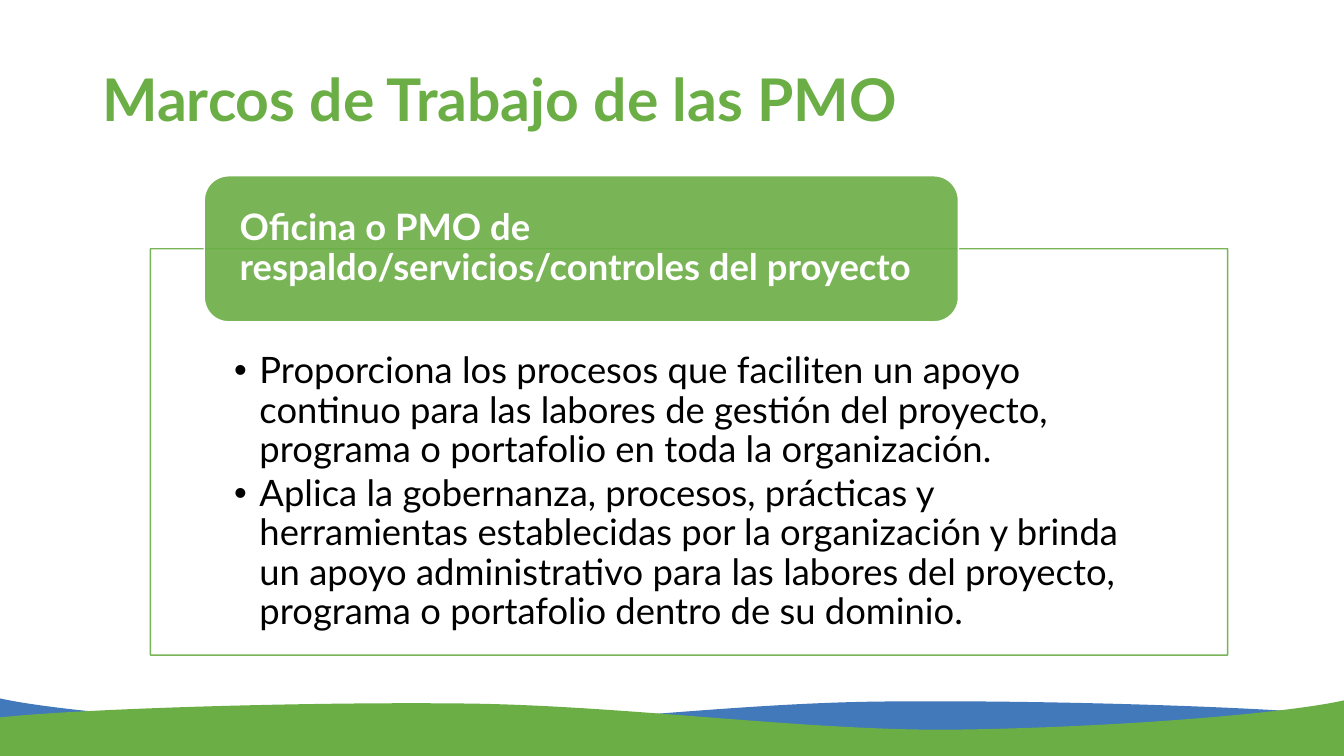
from lxml import etree
from pptx import Presentation
from pptx.dml.color import RGBColor
from pptx.enum.shapes import MSO_SHAPE
from pptx.enum.text import MSO_ANCHOR, MSO_AUTO_SIZE, PP_ALIGN
from pptx.oxml.ns import qn
from pptx.util import Cm, Pt

RECTANGLE, ROUNDED = MSO_SHAPE.RECTANGLE, MSO_SHAPE.ROUNDED_RECTANGLE
TOP, MIDDLE = MSO_ANCHOR.TOP, MSO_ANCHOR.MIDDLE
LEFT = PP_ALIGN.LEFT
NO_FIT = MSO_AUTO_SIZE.NONE

FONT = "Lato"
COLORS = {"green": "6BAE45", "blue": "4279BB", "white": "FFFFFF", "black": "000000"}
PAGE_WIDTH, PAGE_HEIGHT = 33.87, 19.05
TITLE_ONLY = 5

TITLE = "Marcos de Trabajo de las PMO"
HEADING = "Oficina o PMO de respaldo/servicios/controles del proyecto"
POINTS = [
    "Proporciona los procesos que faciliten un apoyo continuo para las labores "
    "de gestión del proyecto, programa o portafolio en toda la organización.",
    "Aplica la gobernanza, procesos, prácticas y herramientas establecidas por "
    "la organización y brinda un apoyo administrativo para las labores del "
    "proyecto, programa o portafolio dentro de su dominio.",
]

# Bézier control points of the wave's upper edge, in cm from the box's top left
WAVE = [(33.87, 0.43), (31.9, 0.21), (26.06, 0.03), (22.1, 0.08), (18.16, 0.13),
        (13.79, 0.74), (10.11, 0.74), (6.43, 0.71), (1.73, 0.38), (0, 0)]


def rgb(name):
    return RGBColor.from_string(COLORS[name])


def set_alpha(fill, name, percent):
    """Give a solid fill or line fill a colour with some transparency."""
    fill.solid()
    fill.fore_color.rgb = rgb(name)
    color = fill._xPr.find(qn("a:solidFill"))[0]
    etree.SubElement(color, qn("a:alpha"), val=str(percent * 1000))


def write(frame, lines, size, color, bold=False, anchor=MIDDLE, insets=(0.25, 0.13, 0.25, 0.13)):
    frame.word_wrap = True
    frame.auto_size = NO_FIT
    frame.vertical_anchor = anchor
    (frame.margin_left, frame.margin_top,
     frame.margin_right, frame.margin_bottom) = map(Cm, insets)
    frame.text = "\n".join(lines)
    for para in frame.paragraphs:
        para.alignment = LEFT
        para.line_spacing = 0.9
        for span in para.runs:
            font = span.font
            font.name, font.size, font.bold = FONT, Pt(size), bold
            font.color.rgb = rgb(color)


def add_bullets(frame, indent):
    for para in frame.paragraphs:
        para.space_after = Pt(3.5)
        props = para._p.get_or_add_pPr()
        props.set("marL", str(Cm(indent)))
        props.set("indent", str(-Cm(indent)))
        etree.SubElement(props, qn("a:buFont"), typeface="Arial")
        etree.SubElement(props, qn("a:buChar"), char="•")


def bend(shape, count):
    """Turn the first line segments of a freeform into cubic curves, three to a curve."""
    lines = list(shape._element.iter(qn("a:lnTo")))[:count]
    for first, second, third in zip(lines[::3], lines[1::3], lines[2::3]):
        curve = etree.Element(qn("a:cubicBezTo"))
        first.addprevious(curve)
        for line in (first, second, third):
            curve.append(line[0])
            line.getparent().remove(line)


def add_wave(page, top, color, mirrored=False):
    edge = [(PAGE_WIDTH - x if mirrored else x, top + y) for x, y in WAVE]
    outline = edge + [(edge[-1][0], PAGE_HEIGHT), (edge[0][0], PAGE_HEIGHT)]
    corners = [(Cm(x), Cm(y)) for x, y in outline]
    builder = page.shapes.build_freeform(*corners[0])
    builder.add_line_segments(corners[1:], close=True)
    wave = builder.convert_to_shape()
    bend(wave, len(WAVE) - 1)
    wave.shadow.inherit = False
    wave.fill.solid()
    wave.fill.fore_color.rgb = rgb(color)
    wave.line.fill.background()


def add_title(page, left, top, width, height):
    title = page.shapes.title
    title.left, title.top, title.width, title.height = map(Cm, (left, top, width, height))
    write(title.text_frame, [TITLE], 42, "green", bold=True)


def add_panel(page, kind, box, fill):
    panel = page.shapes.add_shape(kind, *map(Cm, box))
    panel.shadow.inherit = False
    set_alpha(panel.fill, fill, 90)
    panel.line.width = Pt(1)
    return panel


def add_description(page, left, top, width, height):
    # Framed list
    frame = add_panel(page, RECTANGLE, (left, top, width, height), "white")
    set_alpha(frame.line.fill, "green", 90)
    write(frame.text_frame, POINTS, 26, "black", anchor=TOP, insets=(2.11, 2.61, 2.11, 0.51))
    add_bullets(frame.text_frame, 0.64)

    # Heading centred on the frame's upper edge
    tab_height = 3.68
    tab_box = (left + width * 0.05, top - tab_height / 2, width * 0.7, tab_height)
    tab = add_panel(page, ROUNDED, tab_box, "green")
    tab.line.color.rgb = rgb("white")
    write(tab.text_frame, [HEADING], 26, "white", bold=True, insets=(0.71, 0, 0.71, 0))


def main():
    deck = Presentation()
    deck.slide_width, deck.slide_height = Cm(PAGE_WIDTH), Cm(PAGE_HEIGHT)
    page = deck.slides.add_slide(deck.slide_layouts[TITLE_ONLY])
    add_wave(page, 17.6, "blue")
    add_wave(page, 17.65, "green", mirrored=True)
    add_title(page, 2.33, 0.74, 29.21, 3.68)
    add_description(page, 3.79, 6.27, 27.15, 10.24)
    deck.save("out.pptx")


if __name__ == "__main__":
    main()
